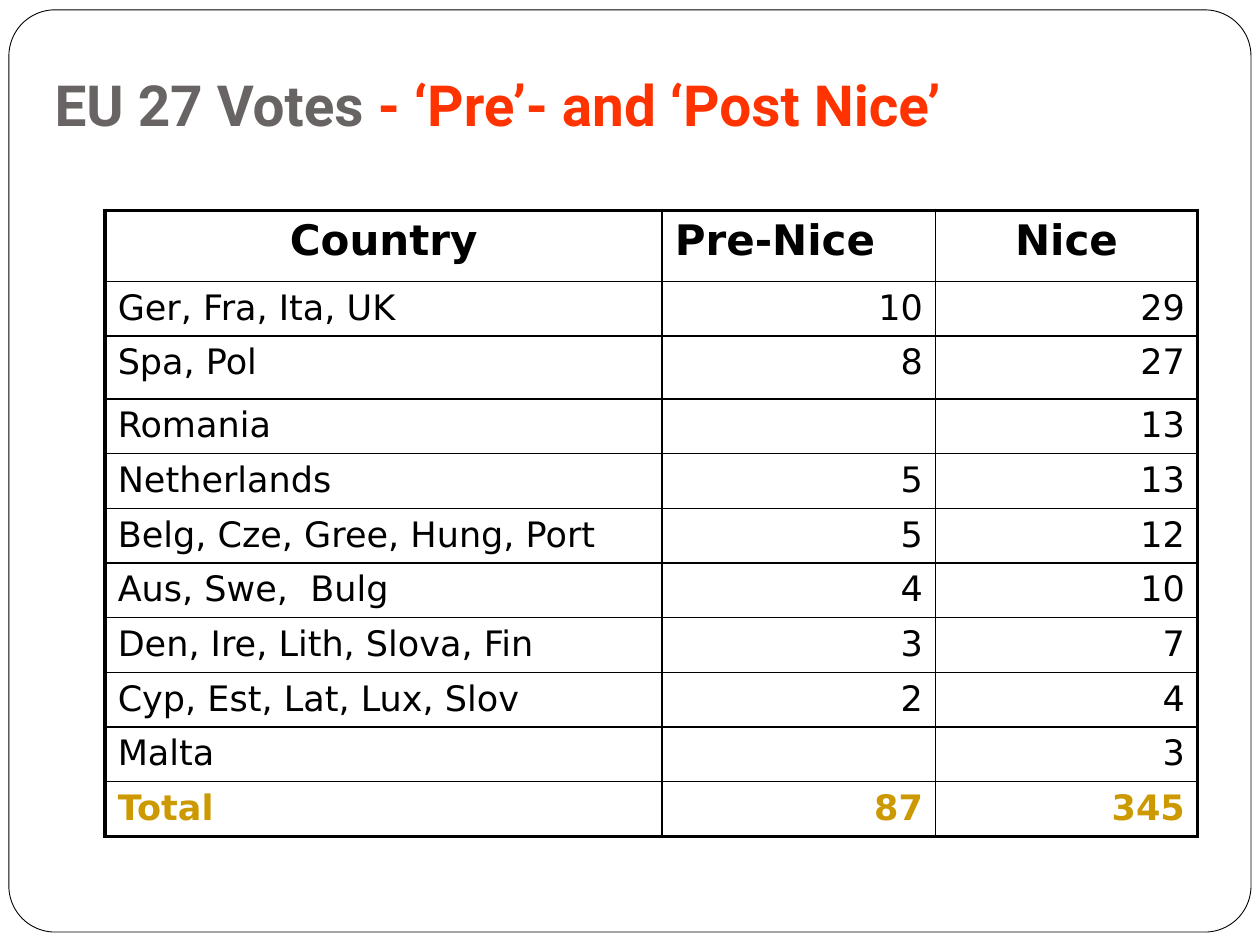
from lxml.etree import SubElement
from pptx import Presentation
from pptx.dml.color import RGBColor
from pptx.enum.shapes import MSO_SHAPE
from pptx.enum.text import MSO_ANCHOR, PP_ALIGN
from pptx.oxml.ns import qn
from pptx.util import Cm, Pt

BLACK, WHITE, GREY, RED, GOLD = "000000", "FFFFFF", "696464", "FF3300", "CC9900"

VOTES = [
    ("Country", "Pre-Nice", "Nice"),
    ("Ger, Fra, Ita, UK", "10", "29"),
    ("Spa, Pol", "8", "27"),
    ("Romania", "", "13"),
    ("Netherlands", "5", "13"),
    ("Belg, Cze, Gree, Hung, Port", "5", "12"),
    ("Aus, Swe,  Bulg", "4", "10"),
    ("Den, Ire, Lith, Slova, Fin", "3", "7"),
    ("Cyp, Est, Lat, Lux, Slov", "2", "4"),
    ("Malta", "", "3"),
    ("Total", "87", "345"),
]
COLUMN_WIDTHS = [11.23, 5.51, 5.28]
ROW_HEIGHTS = [1.43, 1.08, 1.27] + [1.08] * 8
HEADER_ALIGNMENTS = [PP_ALIGN.CENTER, PP_ALIGN.LEFT, PP_ALIGN.CENTER]
BODY_ALIGNMENTS = [PP_ALIGN.LEFT, PP_ALIGN.RIGHT, PP_ALIGN.RIGHT]


def color(value):
    return RGBColor.from_string(value)


class SlideBuilder:
    title_font = "Roboto"
    table_font = "DejaVu Sans"
    outer_line = Pt(2.25)
    inner_line = Pt(1)

    def __init__(self, slide):
        self.slide = slide

    def frame(self, left, top, width, height):
        shape = self.slide.shapes.add_shape(
            MSO_SHAPE.ROUNDED_RECTANGLE, Cm(left), Cm(top), Cm(width), Cm(height)
        )
        shape.adjustments[0] = 0.05
        shape.shadow.inherit = False
        shape.fill.solid()
        shape.fill.fore_color.rgb = color(WHITE)
        shape.line.color.rgb = color(BLACK)
        shape.line.width = Pt(0.5)

    def title(self, left, top, width, height, parts):
        shape = self.slide.shapes.add_textbox(Cm(left), Cm(top), Cm(width), Cm(height))
        text_frame = shape.text_frame
        text_frame.word_wrap = True
        text_frame.vertical_anchor = MSO_ANCHOR.BOTTOM
        text_frame.margin_bottom = Cm(0.25)
        paragraph = text_frame.paragraphs[0]
        paragraph.font.name = self.title_font
        paragraph.font.size = Pt(32.4)
        paragraph.font.bold = True
        for text, text_color in parts:
            run = paragraph.add_run()
            run.text = text
            run.font.color.rgb = color(text_color)

    def border(self, cell, outer_sides):
        properties = cell._tc.get_or_add_tcPr()
        for side in "LRTB":
            width = self.outer_line if side in outer_sides else self.inner_line
            line = SubElement(properties, qn(f"a:ln{side}"), w=str(width))
            fill = SubElement(line, qn("a:solidFill"))
            SubElement(fill, qn("a:srgbClr"), val=BLACK)

    def table(self, left, top, rows):
        last_row, last_column = len(rows) - 1, len(COLUMN_WIDTHS) - 1
        table = self.slide.shapes.add_table(
            len(rows), len(COLUMN_WIDTHS), Cm(left), Cm(top),
            Cm(sum(COLUMN_WIDTHS)), Cm(sum(ROW_HEIGHTS)),
        ).table
        table.first_row = False
        table.horz_banding = False
        for column, width in zip(table.columns, COLUMN_WIDTHS):
            column.width = Cm(width)
        for row, height in zip(table.rows, ROW_HEIGHTS):
            row.height = Cm(height)
        for row_index, values in enumerate(rows):
            is_header, is_total = row_index == 0, row_index == last_row
            alignments = HEADER_ALIGNMENTS if is_header else BODY_ALIGNMENTS
            for column_index, value in enumerate(values):
                cell = table.cell(row_index, column_index)
                edges = {
                    "L": column_index == 0,
                    "R": column_index == last_column,
                    "T": is_header,
                    "B": is_total,
                }
                self.border(cell, [side for side, outer in edges.items() if outer])
                cell.fill.background()
                cell.text = value
                paragraph = cell.text_frame.paragraphs[0]
                paragraph.alignment = alignments[column_index]
                paragraph.font.name = self.table_font
                paragraph.font.size = Pt(24 if is_header else 20)
                paragraph.font.bold = is_header or is_total
                paragraph.font.color.rgb = color(GOLD if is_total else BLACK)


def main():
    presentation = Presentation()
    presentation.slide_width = Cm(25.4)
    presentation.slide_height = Cm(19.05)
    builder = SlideBuilder(presentation.slides.add_slide(presentation.slide_layouts[6]))
    builder.frame(0.18, 0.2, 25.04, 18.59)
    builder.title(
        0.85, 1.48, 22.86, 1.55,
        [("EU 27 Votes", GREY), (" - ‘Pre’- and ‘Post Nice’", RED)],
    )
    builder.table(2.12, 4.24, VOTES)
    presentation.save("out.pptx")


if __name__ == "__main__":
    main()
